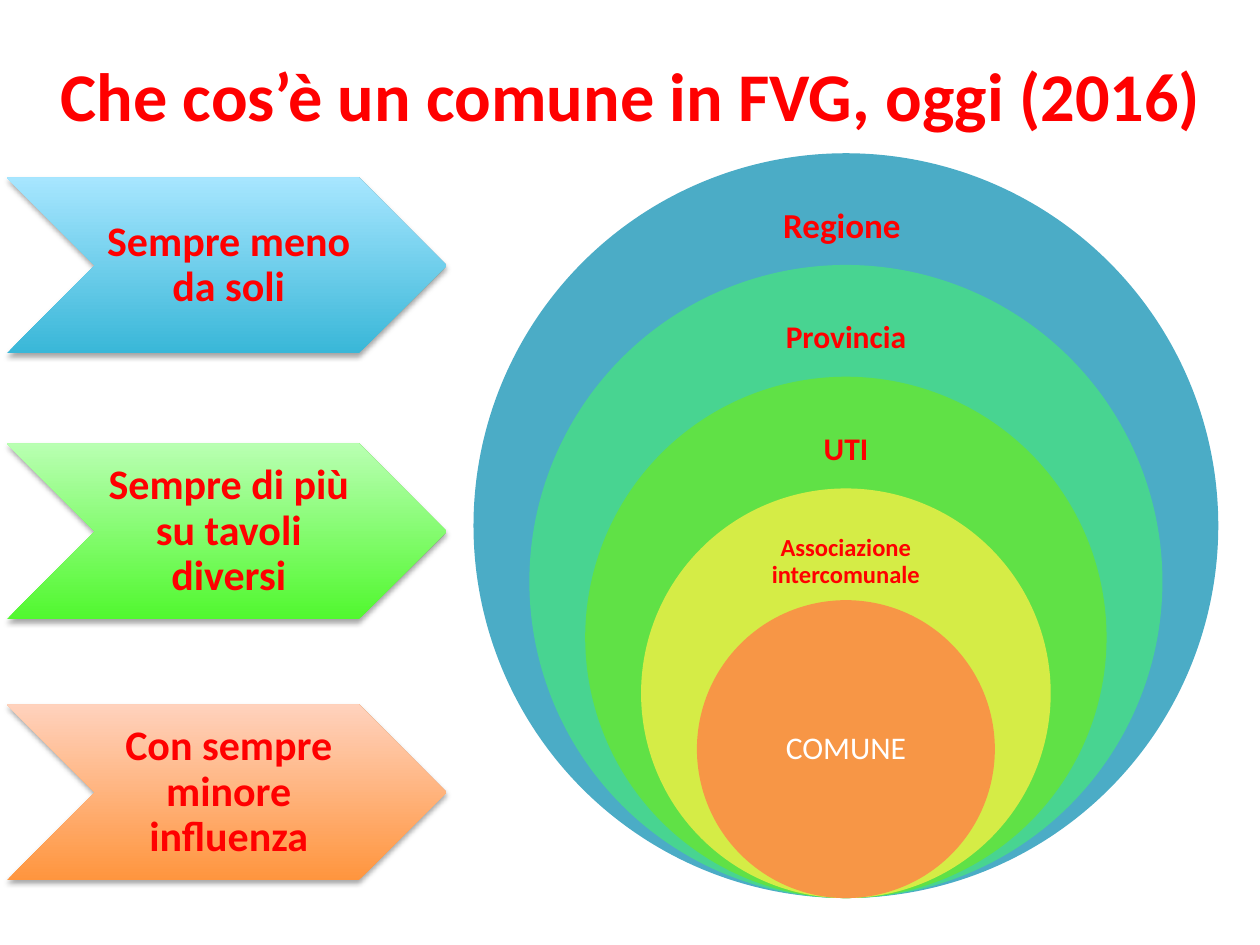
from lxml.etree import SubElement
from pptx import Presentation
from pptx.dml.color import RGBColor
from pptx.enum.shapes import MSO_SHAPE
from pptx.enum.text import MSO_ANCHOR, PP_ALIGN
from pptx.oxml.ns import qn
from pptx.util import Pt

RED = RGBColor(0xFF, 0x00, 0x00)
WHITE = RGBColor(0xFF, 0xFF, 0xFF)
BLUE = RGBColor(0x4B, 0xAC, 0xC6)
TEAL = RGBColor(0x48, 0xD4, 0x91)
GREEN = RGBColor(0x60, 0xE1, 0x46)
YELLOW = RGBColor(0xD5, 0xEC, 0x46)
ORANGE = RGBColor(0xF7, 0x96, 0x46)
SKY_DARK, SKY_LIGHT = RGBColor(0x39, 0xB7, 0xD8), RGBColor(0xA7, 0xE6, 0xFF)
LIME_DARK, LIME_LIGHT = RGBColor(0x51, 0xF8, 0x2F), RGBColor(0xB9, 0xFF, 0xB2)
PEACH_DARK, PEACH_LIGHT = RGBColor(0xFF, 0x95, 0x3E), RGBColor(0xFF, 0xD2, 0xBD)


class SlideBuilder:
    font = "Calibri"

    def __init__(self, page):
        self.page = page

    def text(self, words, left, top, width, height, size, color=RED, bold=True,
             insets=(7.2, 3.6, 7.2, 3.6), spacing=0.9):
        box = self.page.shapes.add_textbox(*map(Pt, (left, top, width, height)))
        frame = box.text_frame
        margins = dict(zip(("left", "top", "right", "bottom"), insets))
        for side, value in margins.items():
            setattr(frame, f"margin_{side}", Pt(value))
        frame.word_wrap = True
        frame.vertical_anchor = MSO_ANCHOR.MIDDLE
        para = frame.paragraphs[0]
        para.alignment = PP_ALIGN.CENTER
        para.line_spacing = spacing
        span = para.add_run()
        span.text = words
        formats = {"name": self.font, "size": Pt(size), "bold": bold}
        for name, value in formats.items():
            setattr(span.font, name, value)
        span.font.color.rgb = color

    def shape(self, kind, left, top, width, height):
        shape = self.page.shapes.add_shape(kind, *map(Pt, (left, top, width, height)))
        shape.shadow.inherit = False
        shape.line.fill.background()
        return shape

    def circle(self, center, bottom, diameter, color):
        circle = self.shape(MSO_SHAPE.OVAL, center - diameter / 2,
                            bottom - diameter, diameter, diameter)
        circle.fill.solid()
        circle.fill.fore_color.rgb = color

    def chevron(self, left, top, width, height, dark, light):
        chevron = self.shape(MSO_SHAPE.CHEVRON, left, top, width, height)
        chevron.fill.gradient()
        chevron.fill.gradient_angle = 90
        for stop, color in zip(chevron.fill.gradient_stops, (dark, light)):
            stop.color.rgb = color
        self.drop_shadow(chevron)

    def drop_shadow(self, shape):
        effects = shape.element.spPr.find(qn("a:effectLst"))
        shadow = SubElement(effects, qn("a:outerShdw"), blurRad=str(Pt(3.1)),
                            dist=str(Pt(1.8)), dir="5400000", rotWithShape="0")
        color = SubElement(shadow, qn("a:srgbClr"), val="000000")
        SubElement(color, qn("a:alpha"), val="35000")


def main():
    deck = Presentation()
    deck.slide_width, deck.slide_height = Pt(720), Pt(540)
    builder = SlideBuilder(deck.slides.add_slide(deck.slide_layouts[6]))

    # Title
    builder.text("Che cos’è un comune in FVG, oggi (2016)",
                 9.4, 21.6, 702, 64, 39, spacing=1)

    # Nested circles sharing their lowest point, each 15% smaller than the first
    center, bottom, outer = 483.4, 513.2, 425.6
    levels = [
        ("Regione ", BLUE, 20, 160, 11.2),
        ("Provincia", TEAL, 18, 156, 10.1),
        ("UTI", GREEN, 18, 154, 10.1),
        ("Associazione intercomunale", YELLOW, 14, 127, 7.9),
    ]
    for index, (words, color, size, width, inset) in enumerate(levels):
        diameter = outer * (1 - 0.15 * index)
        builder.circle(center, bottom, diameter, color)
        builder.text(words, center - width / 2, bottom - diameter + 21, width, 42,
                     size, insets=[inset] * 4)

    # Innermost circle
    core = outer * 0.4
    builder.circle(center, bottom, core, ORANGE)
    builder.text("COMUNE", center - 60, bottom - core * 0.75, 120, core / 2, 18,
                 WHITE, False, [10.1] * 4)

    # Chevrons
    height = 100.6
    messages = [
        ("Sempre meno da soli", 101.4, SKY_DARK, SKY_LIGHT),
        ("Sempre di più su tavoli diversi", 253.4, LIME_DARK, LIME_LIGHT),
        ("Con sempre minore influenza", 402.5, PEACH_DARK, PEACH_LIGHT),
    ]
    for words, top, dark, light in messages:
        builder.chevron(3.8, top, 251.4, height, dark, light)
        builder.text(words, 3.8 + height / 2, top, 151, height, 24,
                     insets=(2.2, 1.4, 0, 1.4))

    deck.save("out.pptx")


if __name__ == "__main__":
    main()
